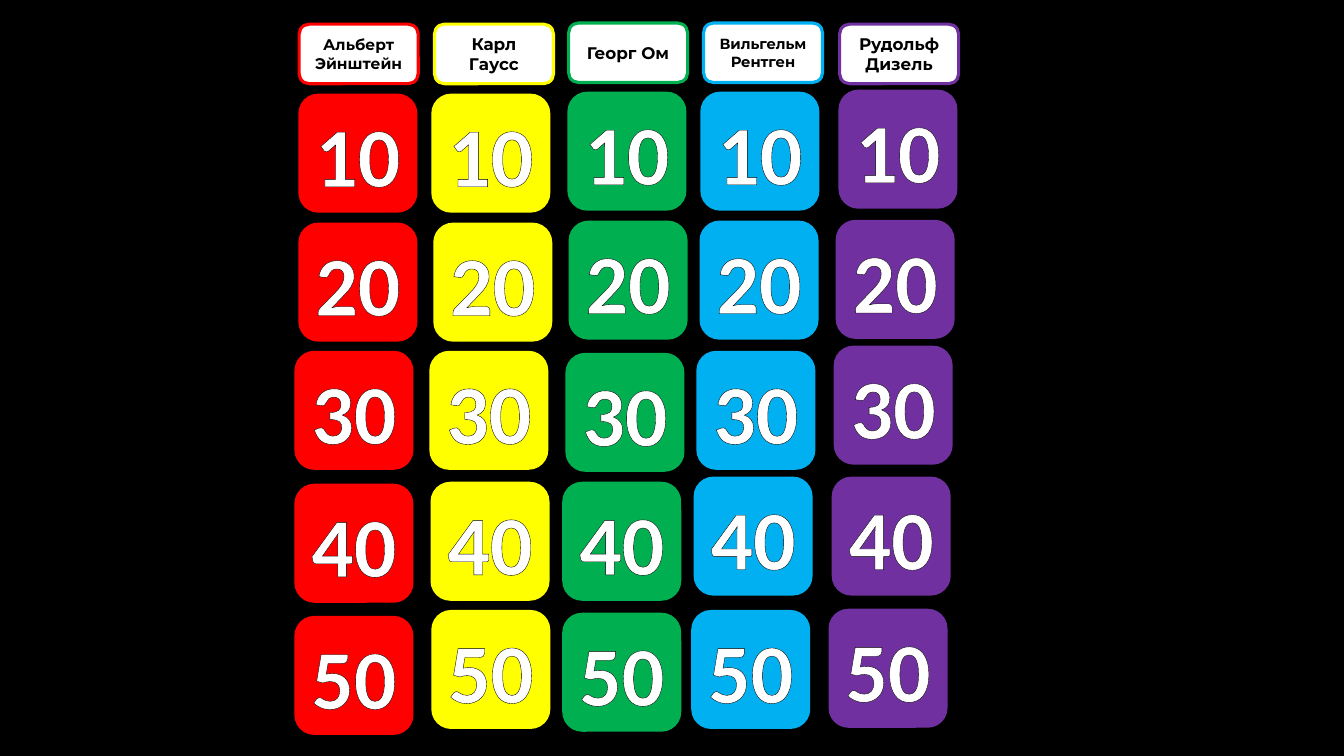
from lxml.etree import SubElement
from pptx import Presentation
from pptx.dml.color import RGBColor
from pptx.enum.shapes import MSO_SHAPE
from pptx.enum.text import MSO_ANCHOR, PP_ALIGN
from pptx.oxml.ns import qn
from pptx.util import Cm, Pt

BLACK = RGBColor(0x00, 0x00, 0x00)
WHITE = RGBColor(0xFF, 0xFF, 0xFF)
RED = RGBColor(0xFF, 0x00, 0x00)
YELLOW = RGBColor(0xFF, 0xFF, 0x00)
GREEN = RGBColor(0x00, 0xB0, 0x50)
BLUE = RGBColor(0x00, 0xB0, 0xF0)
PURPLE = RGBColor(0x70, 0x30, 0xA0)

SIDE = 3
HEIGHT = 1.5
EDGE = Pt(2.25)

COLUMNS = [
    ("Альберт Эйнштейн", 11, RED, (7.54, 0.61),
     [(7.52, 2.36), (7.52, 5.61), (7.42, 8.84), (7.42, 12.19), (7.42, 15.52)]),
    ("Карл Гаусс", 12, YELLOW, (10.95, 0.61),
     [(10.87, 2.36), (10.92, 5.61), (10.82, 8.84), (10.85, 12.14), (10.87, 15.37)]),
    ("Георг Ом", 12, GREEN, (14.33, 0.58),
     [(14.3, 2.31), (14.33, 5.56), (14.25, 8.89), (14.17, 12.14), (14.17, 15.44)]),
    ("Вильгельм Рентген", 10.5, BLUE, (17.73, 0.58),
     [(17.65, 2.31), (17.63, 5.56), (17.55, 8.84), (17.48, 12.01), (17.42, 15.37)]),
    ("Рудольф Дизель", 12, PURPLE, (21.16, 0.61),
     [(21.13, 2.26), (21.06, 5.54), (21.01, 8.71), (20.96, 12.01), (20.88, 15.34)]),
]


def paint(fill, color):
    """Give a fill one solid colour."""
    fill.solid()
    fill.fore_color.rgb = color


def add_card(slide, place, height, color, text, style, ink):
    """Add a rounded card with centred text and return it with its run."""
    left, top = place
    card = slide.shapes.add_shape(
        MSO_SHAPE.ROUNDED_RECTANGLE, Cm(left), Cm(top), Cm(SIDE), Cm(height))
    card.shadow.inherit = False
    paint(card.fill, color)
    frame = card.text_frame
    frame.word_wrap = True
    frame.vertical_anchor = MSO_ANCHOR.MIDDLE
    line = frame.paragraphs[0]
    line.alignment = PP_ALIGN.CENTER
    run = line.add_run()
    run.text = text
    for key, value in style.items():
        setattr(run.font, key, value)
    run.font.color.rgb = ink
    return card, run


def outline(run, color):
    """Draw an outline around the letters of a run."""
    props = run.font._element
    edge = SubElement(props, qn("a:ln"), w=str(EDGE))
    fill = SubElement(edge, qn("a:solidFill"))
    SubElement(fill, qn("a:srgbClr"), val=str(color))
    props.insert(0, edge)


def add_tile(slide, place, color, score):
    """Add a score tile."""
    style = {"name": "Calibri", "size": Pt(60), "bold": True}
    card, run = add_card(slide, place, SIDE, color, str(score), style, WHITE)
    card.line.fill.background()
    outline(run, BLACK)


def add_head(slide, place, color, name, size):
    """Add a column heading with a coloured border."""
    style = {"name": "Montserrat", "size": Pt(size), "bold": True}
    card, _ = add_card(slide, place, HEIGHT, WHITE, name, style, BLACK)
    card.line.color.rgb = color
    card.line.width = EDGE


def main():
    """Build the quiz board and save it."""
    deck = Presentation()
    deck.slide_width, deck.slide_height = Cm(33.87), Cm(19.05)
    slide = deck.slides.add_slide(deck.slide_layouts[6])
    paint(slide.background.fill, BLACK)
    for name, size, color, head, tiles in COLUMNS:
        for row, place in enumerate(tiles, 1):
            add_tile(slide, place, color, row * 10)
        add_head(slide, head, color, name, size)
    deck.save("out.pptx")


if __name__ == "__main__":
    main()
